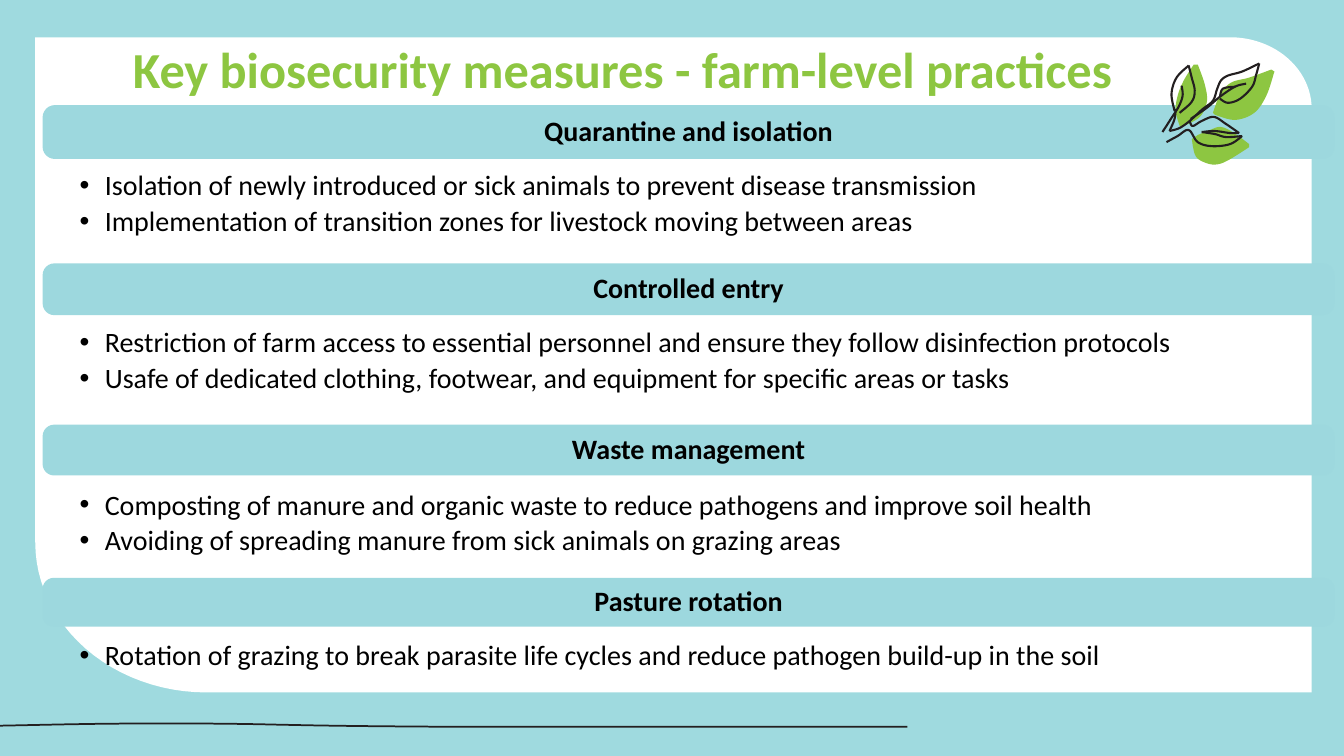
from dataclasses import dataclass
from math import cos, pi, sin

from lxml.etree import SubElement
from pptx import Presentation
from pptx.dml.color import RGBColor
from pptx.enum.shapes import MSO_SHAPE as SHAPE
from pptx.enum.text import MSO_ANCHOR as ANCHOR, PP_ALIGN as ALIGN
from pptx.oxml.ns import qn
from pptx.util import Inches, Pt


@dataclass(frozen=True)
class Theme:
    font: str = "Calibri"
    title_size: int = 36
    text_size: int = 20
    back: str = "9FDADF"
    band: str = "9DD8DE"
    panel: str = "FFFFFF"
    green: str = "8DC641"
    ink: str = "231F20"
    text: str = "000000"


T = Theme()
LEFT, WIDTH = 0.43, 12.8

# Band top, band height, text top, text height, heading, bullets
SECTIONS = [
    (1.05, 0.52, 1.66, 0.77, "Quarantine and isolation", [
        "Isolation of newly introduced or sick animals to prevent disease transmission",
        "Implementation of transition zones for livestock moving between areas"]),
    (2.62, 0.5, 3.22, 0.89, "Controlled entry", [
        "Restriction of farm access to essential personnel and ensure they follow disinfection protocols",
        "Usafe of dedicated clothing, footwear, and equipment for specific areas or tasks"]),
    (4.22, 0.49, 4.83, 0.77, "Waste management", [
        "Composting of manure and organic waste to reduce pathogens and improve soil health",
        "Avoiding of spreading manure from sick animals on grazing areas"]),
    (5.74, 0.47, 6.32, 0.47, "Pasture rotation", [
        "Rotation of grazing to break parasite life cycles and reduce pathogen build-up in the soil"]),
]

# Each leaf is two smooth sides that meet at the tips
LEAVES = [
    ([(11.74, 1.25), (11.9, 1.16), (11.97, 1.01), (11.95, 0.84), (11.88, 0.64)],
     [(11.84, 0.64), (11.74, 0.8), (11.68, 0.95), (11.66, 1.1), (11.7, 1.25)]),
    ([(12.05, 1.14), (12.25, 1.19), (12.44, 1.12), (12.56, 0.95), (12.64, 0.71)],
     [(12.61, 0.69), (12.39, 0.77), (12.21, 0.82), (12.1, 0.94), (12.03, 1.12)]),
    ([(12.39, 1.46), (12.2, 1.58), (12.08, 1.63), (11.97, 1.62), (11.86, 1.55), (11.82, 1.38)],
     [(11.88, 1.34), (12, 1.29), (12.11, 1.26), (12.24, 1.32), (12.39, 1.43)]),
]

# Pen strokes of the sprig
SPRIG = [
    [(11.65, 1.1), (11.62, 0.93), (11.67, 0.77), (11.79, 0.65)],
    [(11.79, 0.65), (11.82, 0.77), (11.85, 0.9), (11.82, 1.01), (11.7, 1.12)],
    [(11.72, 0.85), (11.73, 0.95), (11.69, 1.06), (11.62, 1.17), (11.53, 1.31)],
    [(11.66, 1.08), (11.65, 1.18), (11.6, 1.3)],
    [(11.6, 1.3), (11.7, 1.27), (11.8, 1.2), (11.92, 1.09), (12.03, 1), (12.07, 0.89),
     (12.11, 0.8), (12.18, 0.75), (12.32, 0.71), (12.49, 0.63)],
    [(12.49, 0.63), (12.46, 0.74), (12.42, 0.86), (12.3, 0.98), (12.18, 1.02), (12.1, 0.98)],
    [(12.36, 0.83), (12.25, 0.86), (12.1, 0.96), (11.97, 1.07), (11.81, 1.18)],
    [(12.25, 0.86), (12.13, 0.88), (12.1, 0.96)],
    [(11.8, 1.2), (11.83, 1.25), (11.92, 1.2), (12.04, 1.16), (12.16, 1.23), (12.29, 1.32)],
    [(12.29, 1.32), (12.2, 1.32), (12.05, 1.3), (11.92, 1.31)],
    [(11.92, 1.31), (12.05, 1.33), (12.16, 1.36), (12.32, 1.35)],
    [(12.32, 1.35), (12.2, 1.43), (12.02, 1.45), (11.88, 1.41), (11.79, 1.29),
     (11.68, 1.35), (11.57, 1.41)],
]

GROUND = [(0, 7.2), (1.1, 7.18), (2.2, 7.18), (3.3, 7.2), (4.4, 7.21), (5.5, 7.21), (9, 7.21)]


def rgb(color):
    return RGBColor.from_string(color)


def smooth(points, steps=8):
    """Catmull-Rom curve through the points."""
    padded = [points[0], *points, points[-1]]
    curve = [points[0]]
    for a, b, c, d in zip(padded, padded[1:], padded[2:], padded[3:]):
        for i in range(1, steps + 1):
            u = i / steps
            curve.append(tuple(
                (2 * q + (r - p) * u + (2 * p - 5 * q + 4 * r - t) * u ** 2
                 + (3 * q - p - 3 * r + t) * u ** 3) / 2
                for p, q, r, t in zip(a, b, c, d)))
    return curve


def arc(cx, cy, rx, ry, start, steps=24):
    """Quarter ellipse, clockwise from the start angle."""
    angles = [start + pi / 2 * i / steps for i in range(steps + 1)]
    return [(cx + rx * cos(a), cy + ry * sin(a)) for a in angles]


def paint(s, fill=None, line=None, width=1):
    s.shadow.inherit = False
    if fill:
        s.fill.solid()
        s.fill.fore_color.rgb = rgb(fill)
    else:
        s.fill.background()
    if line:
        s.line.color.rgb = rgb(line)
        s.line.width = Pt(width)
    else:
        s.line.fill.background()


def add_outline(shapes, contours, close=False, **style):
    builder = None
    for contour in contours:
        first, *rest = [(Inches(x), Inches(y)) for x, y in contour]
        if builder is None:
            builder = shapes.build_freeform(*first)
        else:
            builder.move_to(*first)
        builder.add_line_segments(rest, close=close)
    paint(builder.convert_to_shape(), **style)


def add_bullet(p):
    pPr = p._p.get_or_add_pPr()
    pPr.set("marL", str(Inches(0.25)))
    pPr.set("indent", str(-Inches(0.25)))
    SubElement(pPr, qn("a:buFont"), typeface="Arial")
    SubElement(pPr, qn("a:buChar"), char="•")


def write(s, lines, size=T.text_size, color=T.text, bold=False, align=ALIGN.LEFT,
          anchor=ANCHOR.TOP, insets=(0.1, 0.05, 0.1, 0.05), bullets=False, after=0):
    tf = s.text_frame
    tf.word_wrap = True
    tf.vertical_anchor = anchor
    tf.margin_left, tf.margin_top, tf.margin_right, tf.margin_bottom = map(Inches, insets)
    for i, line in enumerate(lines):
        p = tf.paragraphs[0] if i == 0 else tf.add_paragraph()
        p.alignment = align
        p.line_spacing = 0.9
        p.space_after = Pt(after)
        if bullets:
            add_bullet(p)
        r = p.add_run()
        r.text = line
        r.font.name, r.font.size, r.font.bold = T.font, Pt(size), bold
        r.font.color.rgb = rgb(color)


def add_text(shapes, box, lines, **style):
    write(shapes.add_textbox(*map(Inches, box)), lines, **style)


def add_band(shapes, top, height, heading):
    s = shapes.add_shape(SHAPE.ROUNDED_RECTANGLE, *map(Inches, (LEFT, top, WIDTH, height)))
    s.adjustments[0] = 0.22
    paint(s, fill=T.band, line=T.band)
    write(s, [heading], bold=True, align=ALIGN.CENTER, anchor=ANCHOR.MIDDLE, insets=(0.15,) * 4)


def main():
    prs = Presentation()
    prs.slide_width, prs.slide_height = Inches(13.33), Inches(7.5)
    shapes = prs.slides.add_slide(prs.slide_layouts[6]).shapes

    # Backdrop, white panel with two round corners, ground line
    s = shapes.add_shape(SHAPE.RECTANGLE, 0, 0, prs.slide_width, prs.slide_height)
    paint(s, fill=T.back)
    panel = [(0.35, 0.37), *arc(12.2, 1.08, 0.81, 0.71, -pi / 2),
             (13.01, 6.87), *arc(2.05, 5.38, 1.7, 1.49, pi / 2)]
    add_outline(shapes, [panel], close=True, fill=T.panel)
    add_outline(shapes, [smooth(GROUND)], line=T.ink, width=1.25)

    # Title
    add_text(shapes, (1.22, 0.4, 11.59, 0.88), ["Key biosecurity measures - farm-level practices"],
             size=T.title_size, color=T.green, bold=True)

    # Sections
    for band_top, band_height, top, height, heading, points in SECTIONS:
        add_band(shapes, band_top, band_height, heading)
        add_text(shapes, (LEFT, top, WIDTH, height), points, bullets=True, after=4,
                 insets=(0.36, 0.04, 0.22, 0.04))

    # Leaf sprig
    for sides in LEAVES:
        add_outline(shapes, [sum(map(smooth, sides), [])], close=True, fill=T.green)
    add_outline(shapes, map(smooth, SPRIG), line=T.ink, width=1.5)

    prs.save("out.pptx")


if __name__ == "__main__":
    main()
